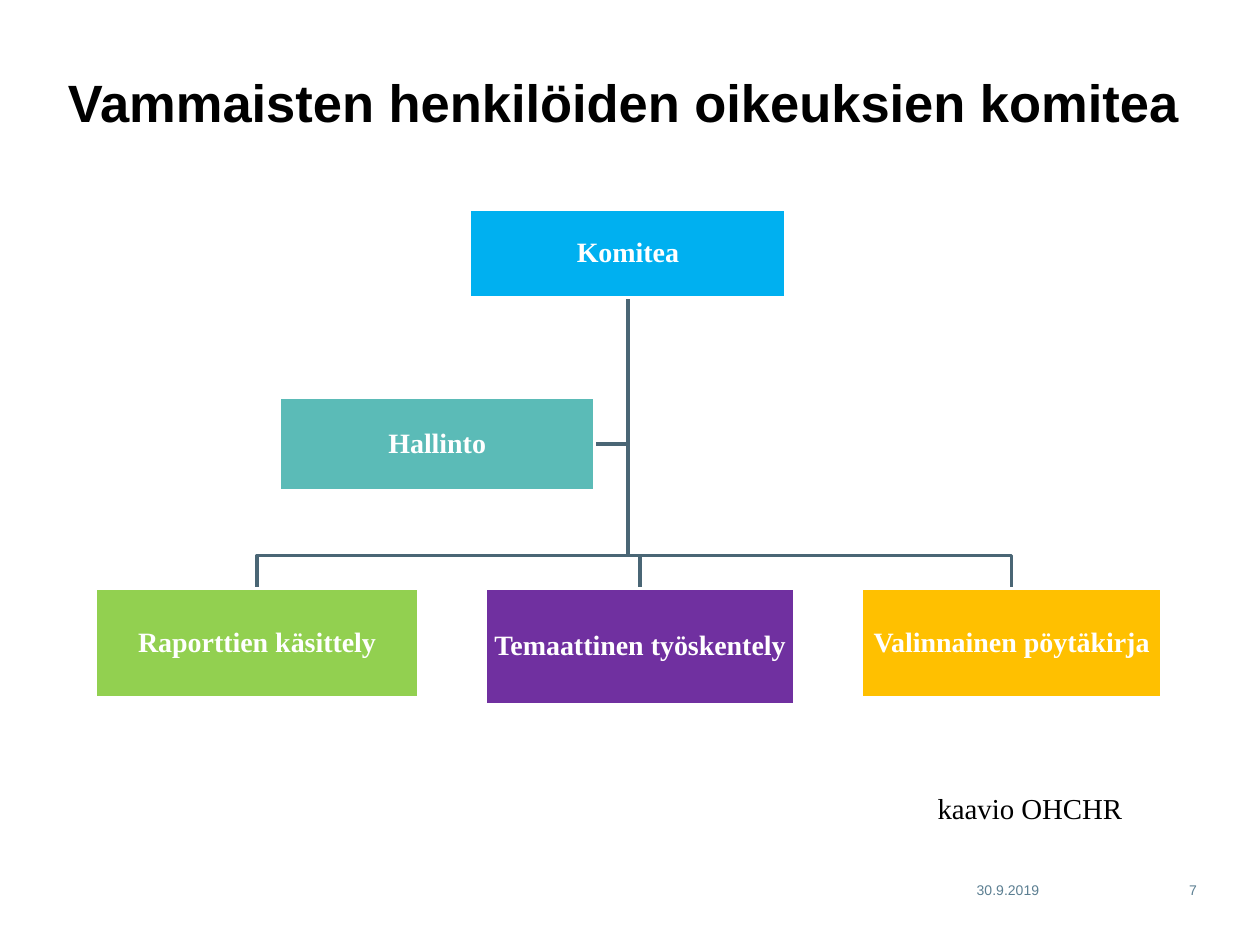
"""Build the committee organisation chart slide."""
import pptx
import pptx.dml.color
import pptx.enum.shapes
import pptx.enum.text
import pptx.util

Cm = pptx.util.Cm
Pt = pptx.util.Pt
ALIGN = pptx.enum.text.PP_ALIGN
ANCHOR = pptx.enum.text.MSO_ANCHOR
HUES = {
    "black": "000000", "white": "FFFFFF", "slate": "5C7F92", "line": "4A6675",
    "blue": "00B0F0", "teal": "5BBBB7", "green": "92D050",
    "purple": "7030A0", "amber": "FFC000",
}


class Deck:
    sans = "Arial"
    serif = "Times New Roman"
    weight = Pt(2)

    def __init__(self):
        self.file = pptx.Presentation()
        self.file.slide_width = Cm(25.4)
        self.file.slide_height = Cm(19.05)
        self.slide = self.file.slides.add_slide(self.file.slide_layouts[5])

    def hue(self, name):
        return pptx.dml.color.RGBColor.from_string(HUES[name])

    def text(self, shape, words, size, face, hue, bold=False,
             align=ALIGN.LEFT, anchor=ANCHOR.TOP, inset=0):
        frame = shape.text_frame
        frame.word_wrap = True
        frame.auto_size = pptx.enum.text.MSO_AUTO_SIZE.NONE
        frame.vertical_anchor = anchor
        frame.margin_left = frame.margin_right = Cm(inset)
        frame.margin_top = frame.margin_bottom = Cm(inset)
        line = frame.paragraphs[0]
        line.alignment = align
        run = line.add_run()
        run.text = words
        run.font.size = Pt(size)
        run.font.name = face
        run.font.bold = bold
        run.font.color.rgb = self.hue(hue)
        return line

    def title(self, words, x, y, wide, high):
        shape = self.slide.shapes.title
        shape.left, shape.top = Cm(x), Cm(y)
        shape.width, shape.height = Cm(wide), Cm(high)
        self.text(shape, words, 30, self.sans, "black", bold=True)

    def label(self, words, x, y, wide, high, size, face, hue, align=ALIGN.LEFT):
        shape = self.slide.shapes.add_textbox(Cm(x), Cm(y), Cm(wide), Cm(high))
        self.text(shape, words, size, face, hue, align=align)

    def box(self, words, hue, x, y, wide, high):
        kind = pptx.enum.shapes.MSO_SHAPE.RECTANGLE
        shape = self.slide.shapes.add_shape(kind, Cm(x), Cm(y), Cm(wide), Cm(high))
        shape.shadow.inherit = False
        shape.fill.solid()
        shape.fill.fore_color.rgb = self.hue(hue)
        shape.line.color.rgb = self.hue("white")
        shape.line.width = self.weight
        line = self.text(shape, words, 16, self.serif, "white", bold=True,
                         align=ALIGN.CENTER, anchor=ANCHOR.MIDDLE, inset=0.03)
        line.line_spacing = 0.9

    def branch(self, *spots):
        first, *rest = [(Cm(x), Cm(y)) for x, y in spots]
        pen = self.slide.shapes.build_freeform(*first)
        pen.add_line_segments(rest, close=False)
        shape = pen.convert_to_shape()
        shape.shadow.inherit = False
        shape.fill.background()
        shape.line.color.rgb = self.hue("line")
        shape.line.width = self.weight


def main():
    deck = Deck()
    deck.title("Vammaisten henkilöiden oikeuksien komitea", 1.37, 1.42, 23.39, 2.92)

    head = ("Komitea", "blue", 9.47, 4.22, 6.38, 1.78)
    staff = ("Hallinto", "teal", 5.64, 8, 6.35, 1.9)
    row, bar = 11.86, 11.2
    teams = [
        ("Raporttien käsittely", "green", 1.92, row, 6.53, 2.21),
        ("Temaattinen työskentely", "purple", 9.78, row, 6.25, 2.34),
        ("Valinnainen pöytäkirja", "amber", 17.36, row, 6.07, 2.21),
    ]

    x, y, wide, high = head[2:]
    stem, base = x + wide / 2, y + high
    x, y, wide, high = staff[2:]
    side = y + high / 2
    deck.branch((stem, base), (stem, side), (x + wide, side))
    for team in teams:
        mid = team[2] + team[4] / 2
        deck.branch((stem, base), (stem, bar), (mid, bar), (mid, row))
    for item in (head, *teams, staff):
        deck.box(*item)

    deck.label("kaavio OHCHR", 18.9, 15.93, 5.23, 0.61, 16.5, deck.serif, "black")
    deck.label("30.9.2019", 19.69, 17.78, 3.07, 1.27, 8, deck.sans, "slate")
    deck.label("7", 22.86, 17.78, 1.27, 1.27, 8, deck.sans, "slate", ALIGN.RIGHT)
    deck.file.save("out.pptx")


if __name__ == "__main__":
    main()
